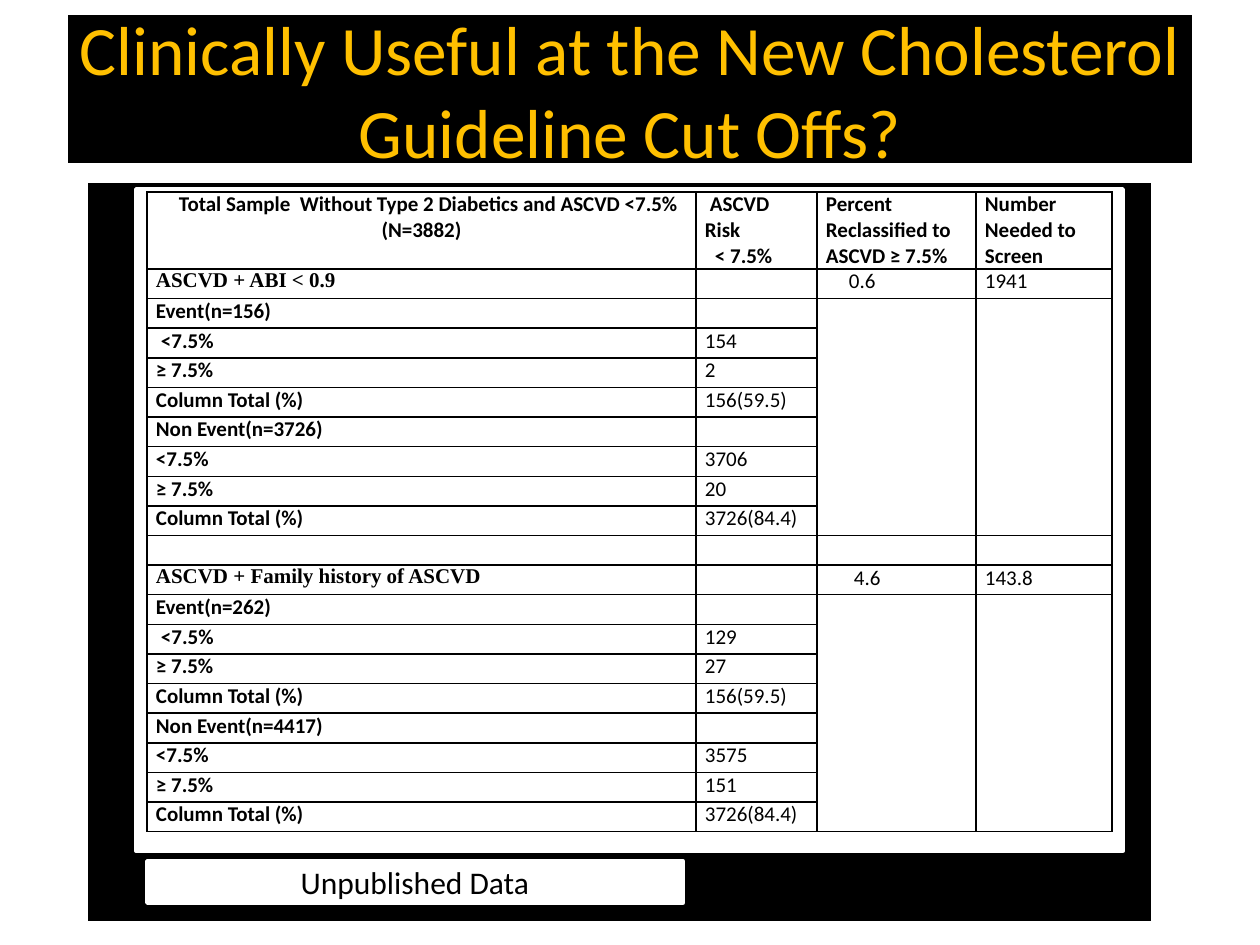
from lxml import etree
from pptx import Presentation
from pptx.dml.color import RGBColor
from pptx.enum.shapes import MSO_SHAPE
from pptx.enum.text import MSO_ANCHOR, PP_ALIGN
from pptx.oxml.ns import qn
from pptx.util import Pt

PX = 914400 / 126
RECT = MSO_SHAPE.RECTANGLE
MIDDLE, TOP = MSO_ANCHOR.MIDDLE, MSO_ANCHOR.TOP
CENTER, LEFT = PP_ALIGN.CENTER, PP_ALIGN.LEFT
COLORS = {"black": "000000", "white": "FFFFFF", "gold": "FFC000"}

COLUMN_WIDTHS = [549, 121, 159, 136]
HEADER_HEIGHT, BODY_HEIGHT = 77, 563
GROUP_ROWS = 9

# Each header line: text, alignment, left indent, first-line indent
HEADERS = [
    [("Total Sample  Without Type 2 Diabetics and ASCVD <7.5%", LEFT, 23, 0),
     ("(N=3882)", CENTER, 0, 0)],
    [("ASCVD Risk", LEFT, 0, 5), ("< 7.5%", LEFT, 10, 0)],
    [("Percent", LEFT, 0, 0), ("Reclassified to", LEFT, 0, 0),
     ("ASCVD ≥ 7.5%", LEFT, 0, 0)],
    [("Number Needed to Screen", LEFT, 0, 0)],
]
# Each group: title, reclassified, its indent, screened, events, non events
GROUPS = [
    ("ASCVD + ABI < 0.9", "0.6", 23, "1941",
     ("Event(n=156)", "154", "2", "156(59.5)"),
     ("Non Event(n=3726)", "3706", "20", "3726(84.4)")),
    ("ASCVD + Family history of ASCVD", "4.6", 28, "143.8",
     ("Event(n=262)", "129", "27", "156(59.5)"),
     ("Non Event(n=4417)", "3575", "151", "3726(84.4)")),
]


def emu(px):
    return round(px * PX)


def rgb(name):
    return RGBColor.from_string(COLORS[name])


class SlideBuilder:
    font = "Calibri"
    table_size = 12

    def __init__(self, slide):
        self.slide = slide

    def style(self, p, size, color="black", bold=False, font=None):
        f = p.font
        f.name, f.size, f.bold = font or self.font, Pt(size), bold
        f.color.rgb = rgb(color)

    def box(self, x, y, w, h, fill, line_width):
        sp = self.slide.shapes.add_shape(RECT, *map(emu, (x, y, w, h)))
        sp.shadow.inherit = False
        sp.fill.solid()
        sp.fill.fore_color.rgb = rgb(fill)
        sp.line.color.rgb = rgb("white")
        sp.line.width = Pt(line_width)
        return sp

    def label(self, sp, text, size, color):
        tf = sp.text_frame
        tf.word_wrap = True
        tf.vertical_anchor = MIDDLE
        tf.margin_left = tf.margin_right = emu(6)
        tf.margin_top = tf.margin_bottom = 0
        p = tf.paragraphs[0]
        p.text, p.alignment = text, CENTER
        self.style(p, size, color)

    def table(self, x, y, rows):
        width, height = sum(COLUMN_WIDTHS), HEADER_HEIGHT + BODY_HEIGHT
        frame = self.slide.shapes.add_table(
            rows, len(COLUMN_WIDTHS), *map(emu, (x, y, width, height)))
        table = frame.table
        table.first_row = table.horz_banding = False
        for column, w in zip(table.columns, COLUMN_WIDTHS):
            column.width = emu(w)
        for row in table.rows:
            row.height = emu(BODY_HEIGHT / (rows - 1))
        table.rows[0].height = emu(HEADER_HEIGHT)
        for cell in table.iter_cells():
            self.prepare_cell(cell)
        return table

    def prepare_cell(self, cell):
        """Set margins, black borders, white fill and the empty line's size."""
        cell.margin_left = cell.margin_right = emu(9)
        cell.margin_top = cell.margin_bottom = 0
        cell.vertical_anchor = TOP
        props = cell._tc.get_or_add_tcPr()
        for side in ("a:lnL", "a:lnR", "a:lnT", "a:lnB"):
            ln = etree.SubElement(props, qn(side), w=str(Pt(1)))
            fill = etree.SubElement(ln, qn("a:solidFill"))
            etree.SubElement(fill, qn("a:srgbClr"), val=COLORS["black"])
        cell.fill.solid()
        cell.fill.fore_color.rgb = rgb("white")
        etree.SubElement(cell.text_frame.paragraphs[0]._p, qn("a:endParaRPr"),
                         sz=str(self.table_size * 100))

    def cell_text(self, cell, lines, bold=False, font=None):
        tf = cell.text_frame
        for i, (text, align, left, first) in enumerate(lines):
            p = tf.add_paragraph() if i else tf.paragraphs[0]
            p.text, p.alignment = text, align
            self.style(p, self.table_size, bold=bold, font=font)
            props = p._p.get_or_add_pPr()
            props.set("marL", str(emu(left)))
            props.set("indent", str(emu(first)))

    def group(self, table, top, group):
        title, percent, indent, screened, *blocks = group

        def put(row, col, text, left=0, **style):
            self.cell_text(table.cell(row, col), [(text, LEFT, left, 0)], **style)

        put(top, 0, title, bold=True, font="Times New Roman")
        put(top, 2, percent, indent)
        put(top, 3, screened)
        for i, (heading, low, high, total) in enumerate(blocks):
            row = top + 1 + 4 * i
            put(row, 0, heading, bold=True)
            put(row + 1, 0, "<7.5%", 0 if i else 5, bold=True)
            put(row + 2, 0, "≥ 7.5%", bold=True)
            put(row + 3, 0, "Column Total (%)", bold=True)
            for offset, value in enumerate((low, high, total), 1):
                put(row + offset, 1, value)
        for col in (2, 3):
            table.cell(top + 1, col).merge(table.cell(top + GROUP_ROWS - 1, col))


def main():
    prs = Presentation()
    prs.slide_width, prs.slide_height = emu(1260), emu(945)
    s = SlideBuilder(prs.slides.add_slide(prs.slide_layouts[6]))

    s.box(84, 179, 1071, 746, "black", 4.5)
    s.box(136, 189, 987, 662, "white", 2)
    title = s.box(63, 10, 1134, 158, "black", 6)
    s.label(title, "Clinically Useful at the New Cholesterol Guideline Cut Offs?",
            39.6, "gold")

    # One header row, and a blank row between the groups
    table = s.table(147, 192, len(GROUPS) * (GROUP_ROWS + 1))
    for col, lines in enumerate(HEADERS):
        s.cell_text(table.cell(0, col), lines, bold=True)
    for i, group in enumerate(GROUPS):
        s.group(table, 1 + i * (GROUP_ROWS + 1), group)

    note = s.box(147, 861, 536, 42, "white", 2)
    s.label(note, "Unpublished Data", 18, "black")
    prs.save("out.pptx")


if __name__ == "__main__":
    main()
